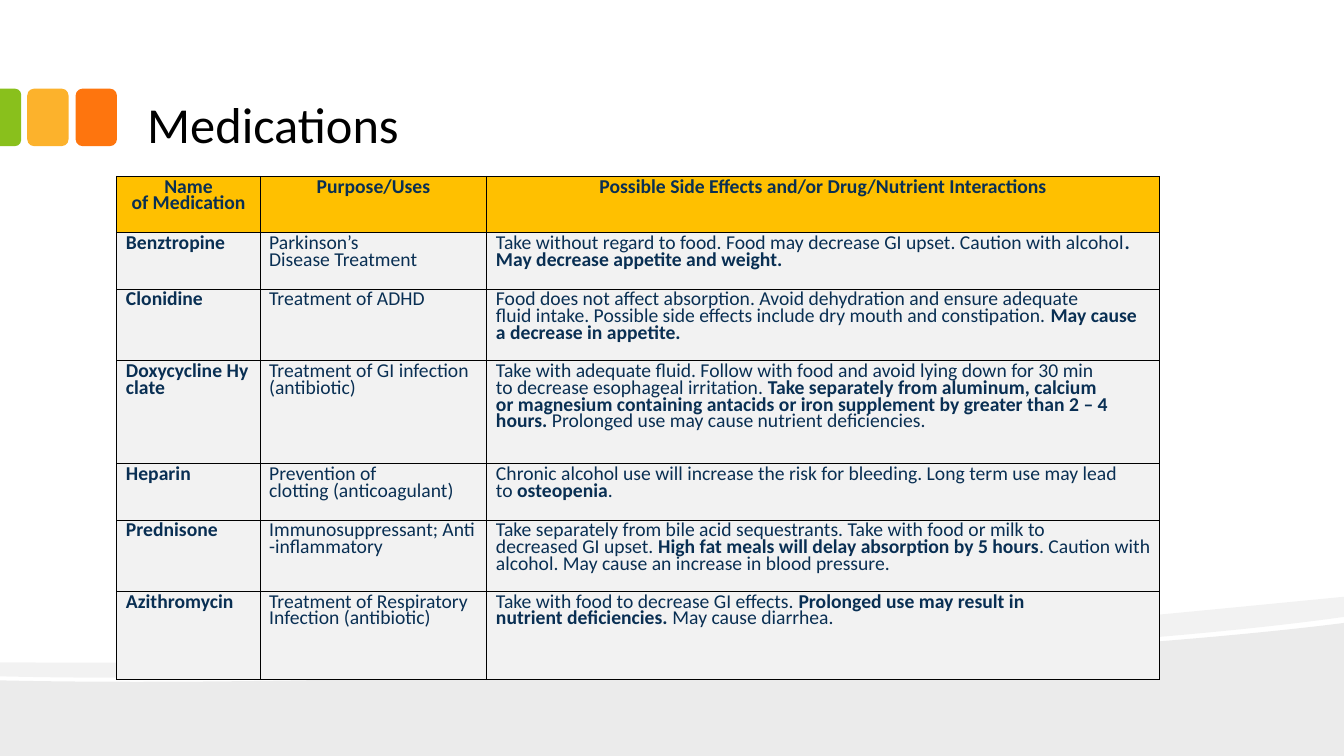
from lxml import etree
from pptx import Presentation, util as u
from pptx.dml.color import RGBColor
from pptx.enum import shapes, text
from pptx.oxml import ns

HUES = {"ink": "000000", "navy": "092F53", "gold": "FFC000", "pale": "F2F2F2",
        "green": "89C01C", "amber": "FCB22C", "orange": "FE750E"}
HARD = chr(160)
COLS = [1.42, 2.25, 6.67]
ROWS = [0.56, 0.56, 0.71, 1.02, 0.56, 0.71, 0.87]
DRUGS = [
    ["*Name of~Medication", "*Purpose/Uses",
     "*Possible Side Effects and/or Drug/Nutrient Interactions"],
    ["*Benztropine~", "Parkinson’s Disease~Treatment",
     "Take without regard to food. Food may decrease GI upset. Caution with alcohol"
     "*. May~decrease appetite and weight.~"],
    ["*Clonidine", "Treatment of ADHD~",
     "Food does not affect absorption. Avoid dehydration and ensure adequate "
     "fluid~intake.~Possible side~effects include dry mouth and constipation.~"
     "*May cause a~decrease in appetite.~"],
    ["*Doxycycline~Hyclate~", "Treatment of GI~infection (antibiotic)",
     "Take with adequate fluid. Follow with food and avoid lying down for 30 min "
     "to~decrease esophageal irritation.~*Take separately from aluminum, calcium "
     "or~magnesium~containing~antacids or iron supplement by greater than 2 – 4 "
     "hours.~*Prolonged use may cause nutrient deficiencies.~"],
    ["*Heparin~", "Prevention of clotting~(anticoagulant)~",
     "Chronic alcohol use will increase the risk for bleeding. Long term use may lead "
     "to~*osteopenia*.~"],
    ["*Prednisone~", "Immunosuppressant;~Anti-inflammatory",
     "Take separately from bile acid sequestrants. Take with food or milk to "
     "decreased~GI~upset.~*High fat meals will delay absorption by 5 hours*. Caution "
     "with alcohol. May~cause an increase in blood pressure.~"],
    ["*Azithromycin", "Treatment of~Respiratory Infection~(antibiotic)~",
     "Take with food to decrease GI effects.~*Prolonged use may result in "
     "nutrient~deficiencies.*~May cause diarrhea.~"],
]


class Deck:
    def __init__(self):
        self.prs = Presentation()
        self.prs.slide_width, self.prs.slide_height = u.Inches(13.33), u.Inches(7.5)
        self.slide = self.prs.slides.add_slide(self.prs.slide_layouts[5])

    def style(self, item, form):
        for key, val in form.items():
            setattr(item, key, val)

    def font(self, run, size, hue, bold=False):
        self.style(run.font, {"name": "Calibri", "size": u.Pt(size), "bold": bold})
        run.font.color.rgb = RGBColor.from_string(HUES[hue])

    def paint(self, shape, hue, alpha=None):
        shape.shadow.inherit = False
        shape.line.fill.background()
        shape.fill.solid()
        shape.fill.fore_color.rgb = RGBColor.from_string(HUES[hue])
        if alpha:
            tone = shape.fill._xPr.find(".//" + ns.qn("a:srgbClr"))
            etree.SubElement(tone, ns.qn("a:alpha"), val=str(alpha * 1000))

    def title(self, words, box):
        head = self.slide.shapes.title
        self.style(head, dict(zip(("left", "top", "width", "height"), map(u.Inches, box))))
        self.style(head.text_frame, {
            "text": words, "vertical_anchor": text.MSO_ANCHOR.BOTTOM, "word_wrap": True,
            "margin_left": u.Inches(0.13), "margin_right": u.Inches(0.13),
            "margin_top": u.Inches(0.07), "margin_bottom": u.Inches(0.07)})
        para = head.text_frame.paragraphs[0]
        para.alignment = text.PP_ALIGN.LEFT
        self.font(para.runs[0], 36, "ink")

    def tab(self, kind, box, hue, turn=0, adjust=()):
        shape = self.slide.shapes.add_shape(kind, *map(u.Inches, box))
        shape.rotation = turn
        for i, val in enumerate(adjust):
            shape.adjustments[i] = val
        self.paint(shape, hue)

    def wave(self, start, parts, alpha):
        form = self.slide.shapes.build_freeform(*map(u.Inches, start))
        form.add_line_segments([tuple(map(u.Inches, spot)) for part in parts for spot in part])
        shape = form.convert_to_shape()
        lines = iter(list(shape._element.iter(ns.qn("a:lnTo"))))
        for part in parts:
            first = next(lines)
            if len(part) == 3:
                first.tag_new = None
                bend = etree.Element(ns.qn("a:cubicBezTo"))
                first.addprevious(bend)
                for line in (first, next(lines), next(lines)):
                    bend.append(line[0])
                    line.getparent().remove(line)
        self.paint(shape, "ink", alpha)

    def border(self, cell):
        props = cell._tc.get_or_add_tcPr()
        for i, side in enumerate(("lnL", "lnR", "lnT", "lnB")):
            line = etree.Element(ns.qn("a:" + side), w=str(u.Pt(0.78)))
            fill = etree.SubElement(line, ns.qn("a:solidFill"))
            etree.SubElement(fill, ns.qn("a:srgbClr"), val=HUES["ink"])
            props.insert(i, line)

    def cell(self, cell, words, head):
        self.style(cell, {"margin_left": u.Inches(0.09), "margin_right": u.Inches(0.09),
                          "margin_top": u.Inches(0.05), "margin_bottom": u.Inches(0.05)})
        cell.fill.solid()
        cell.fill.fore_color.rgb = RGBColor.from_string(HUES["gold" if head else "pale"])
        para = cell.text_frame.paragraphs[0]
        self.style(para, {"line_spacing": u.Pt(12),
                          "alignment": text.PP_ALIGN.CENTER if head else text.PP_ALIGN.LEFT})
        for i, part in enumerate(words.replace("~", HARD).split("*")):
            if part:
                run = para.add_run()
                run.text = part
                self.font(run, 14, "navy", i % 2 == 1)
        self.border(cell)

    def table(self, data, left, top):
        box = map(u.Inches, (left, top, sum(COLS), sum(ROWS)))
        grid = self.slide.shapes.add_table(len(ROWS), len(COLS), *box).table
        self.style(grid, {"first_row": False, "horz_banding": False})
        for col, wide in zip(grid.columns, COLS):
            col.width = u.Inches(wide)
        for r, (row, tall) in enumerate(zip(data, ROWS)):
            grid.rows[r].height = u.Inches(tall)
            for c, words in enumerate(row):
                self.cell(grid.cell(r, c), words, r == 0)


def main():
    deck = Deck()
    deck.wave((13.33, 6.18), [
        [(13.33, 7.5)], [(0, 7.5)], [(0, 6.75)],
        [(3.52, 6.83), (10.42, 6.55), (13.33, 6.18)]], 8)
    deck.wave((13.33, 5.92), [
        [(13.33, 6.12)],
        [(12.55, 6.23), (11.49, 6.33), (10.29, 6.41)],
        [(6.98, 6.63), (2.58, 6.77), (0, 6.71)],
        [(0, 6.57)],
        [(6.52, 6.62), (9.71, 6.27), (13.33, 5.92)]], 5)
    kind = shapes.MSO_SHAPE
    for left, hue in ((0.75, "orange"), (0.27, "amber")):
        deck.tab(kind.ROUNDED_RECTANGLE, (left, 0.88, 0.41, 0.57), hue)
    deck.tab(kind.ROUND_2_SAME_RECTANGLE, (-0.18, 1.06, 0.57, 0.21), "green", 90, (0.29, 0))
    deck.title("Medications", (1.33, 0.17, 10.66, 1.42))
    deck.table(DRUGS, 1.16, 1.75)
    deck.prs.save("out.pptx")


if __name__ == "__main__":
    main()
